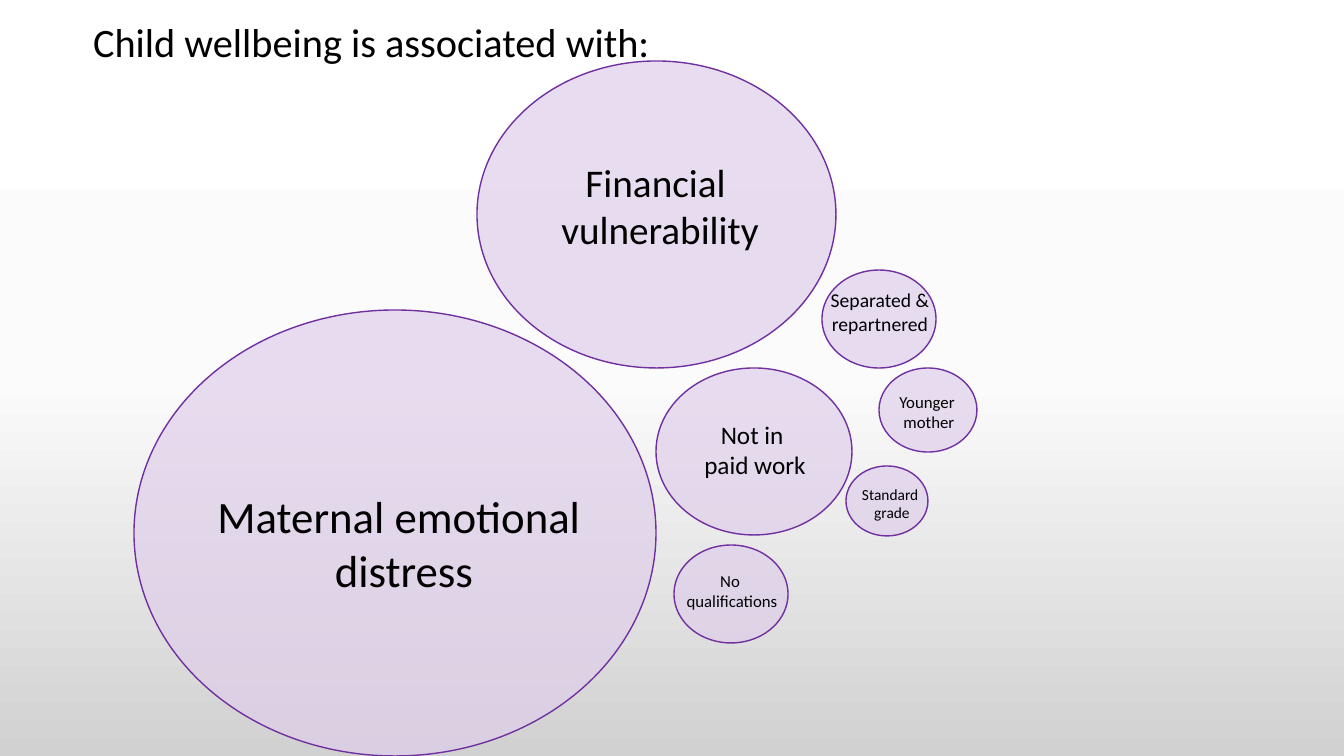
from copy import deepcopy

from lxml.etree import SubElement
from pptx import Presentation
from pptx.dml.color import RGBColor
from pptx.enum.shapes import MSO_SHAPE
from pptx.enum.text import MSO_ANCHOR, MSO_AUTO_SIZE, PP_ALIGN
from pptx.oxml.ns import qn
from pptx.util import Pt

EMU_PER_PX = 914400 / 100.8
FONT = "Calibri"
COLORS = {
    "text": "000000",
    "bubble": "DFCEEA",
    "outline": "7030A0",
    "top": "FFFFFF",
    "middle": "FBFBFB",
    "bottom": "D1D1D1",
}


def px(*lengths):
    return [round(length * EMU_PER_PX) for length in lengths]


def write_text(shape, text, size, align=PP_ALIGN.CENTER, anchor=MSO_ANCHOR.TOP,
               wrap=True, auto_size=MSO_AUTO_SIZE.NONE, line_spacing=None):
    frame = shape.text_frame
    frame.text = text
    frame.word_wrap = wrap
    frame.auto_size = auto_size
    frame.vertical_anchor = anchor
    for paragraph in frame.paragraphs:
        paragraph.alignment = align
        paragraph.line_spacing = line_spacing
        for run in paragraph.runs:
            run.font.name = FONT
            run.font.size = Pt(size)
            run.font.color.rgb = RGBColor.from_string(COLORS["text"])


presentation = Presentation()
presentation.slide_width, presentation.slide_height = px(1344, 756)
slide = presentation.slides.add_slide(presentation.slide_layouts[5])

background = slide.background.fill
background.gradient()
background.gradient_angle = 270
stop_list = slide.element.find(".//" + qn("a:gsLst"))
stop_list.insert(1, deepcopy(stop_list[0]))
for stop, position, name in zip(background.gradient_stops, (0, 0.5, 1), ("top", "middle", "bottom")):
    stop.position = position
    stop.color.rgb = RGBColor.from_string(COLORS[name])

title = slide.shapes.title
title.left, title.top, title.width, title.height = px(83, 16, 1159, 56)
write_text(title, "Child wellbeing is associated with:", size=28.8, align=PP_ALIGN.LEFT,
           anchor=MSO_ANCHOR.MIDDLE, line_spacing=0.9)

bubbles = [
    (879, 368, 98, 84),
    (134, 310, 522, 446),
    (477, 61, 359, 307),
    (674, 545, 114, 98),
    (846, 466, 82, 70),
    (656, 368, 196, 167),
    (822, 270, 114, 98),
]
bubble_group = slide.shapes.add_group_shape()
for box in bubbles:
    bubble = bubble_group.shapes.add_shape(MSO_SHAPE.OVAL, *px(*box))
    bubble.shadow.inherit = False
    bubble.fill.solid()
    bubble.fill.fore_color.rgb = RGBColor.from_string(COLORS["bubble"])
    color = bubble.element.spPr.find(qn("a:solidFill"))[0]
    SubElement(color, qn("a:alpha")).set("val", "69000")
    bubble.line.color.rgb = RGBColor.from_string(COLORS["outline"])
    bubble.line.width = Pt(1)

labels = [
    ("Financial \nvulnerability", 28, False, (550, 153, 220, 105)),
    ("Maternal emotional \ndistress", 32, False, (205, 484, 398, 119)),
    ("Separated &\nrepartnered", 14, False, (820, 283, 120, 57)),
    ("Not in \npaid work", 18, True, (690, 414, 130, 72)),
    ("No \nqualifications", 12, False, (676, 566, 112, 50)),
    ("Younger \nmother", 12, False, (889, 387, 80, 50)),
    ("Standard \ngrade", 11, True, (851, 480, 82, 47)),
]
for text, size, wrap, box in labels:
    label = slide.shapes.add_textbox(*px(*box))
    write_text(label, text, size=size, wrap=wrap, auto_size=MSO_AUTO_SIZE.SHAPE_TO_FIT_TEXT)

presentation.save("out.pptx")
